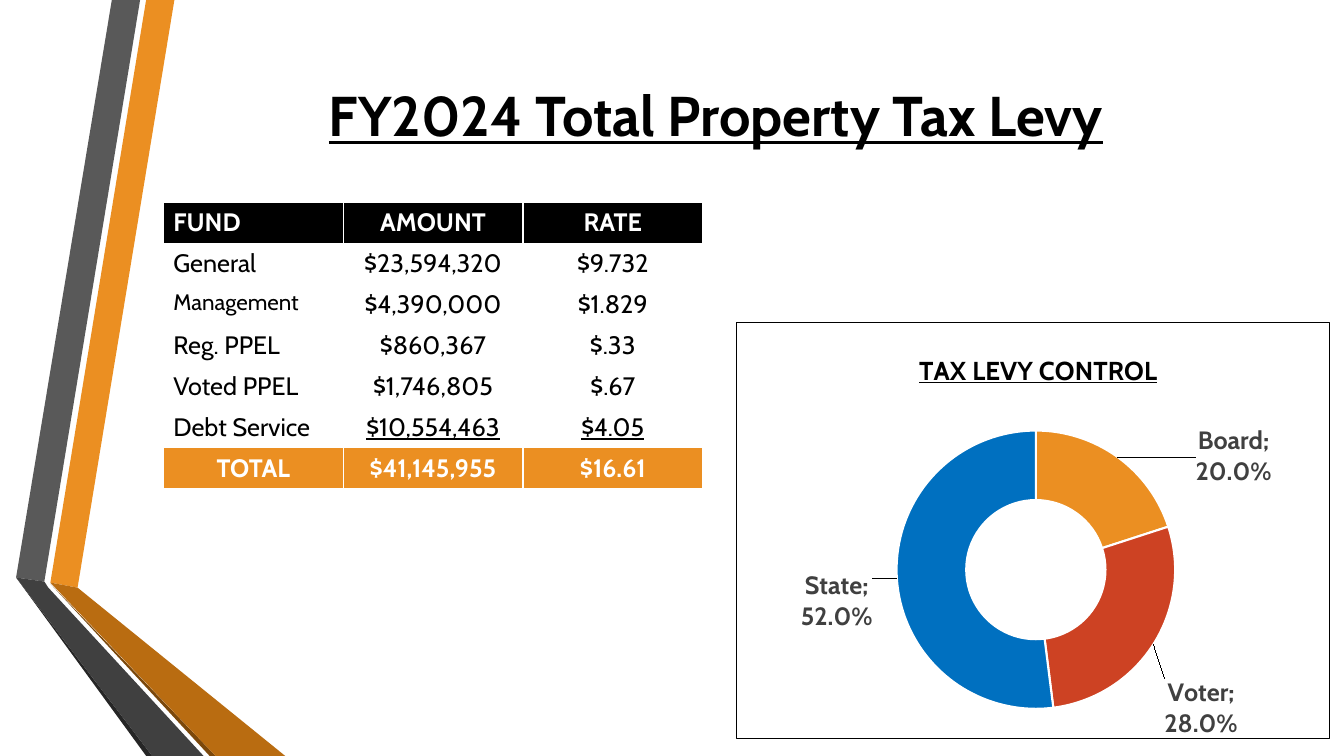
"""Build the FY2024 property tax levy slide with its fund table and control chart."""
from pptx import Presentation
from pptx.chart.data import CategoryChartData
from pptx.dml.color import RGBColor as RGB
from pptx.enum.chart import XL_CHART_TYPE as Kind
from pptx.enum.text import MSO_ANCHOR as Anchor, MSO_AUTO_SIZE as Fit, PP_ALIGN as Align
from pptx.oxml import parse_xml
from pptx.util import Inches, Pt

FONT = "Cabin"
BLACK = RGB(0, 0, 0)
WHITE = RGB(0xFF, 0xFF, 0xFF)
ORANGE = RGB(0xEB, 0x8F, 0x22)
RED = RGB(0xCD, 0x42, 0x23)
BLUE = RGB(0x00, 0x70, 0xC0)
GREY = RGB(0x59, 0x59, 0x59)
INK = RGB(0x26, 0x26, 0x26)
BROWN = RGB(0x7B, 0x48, 0x0B)
OCHRE = RGB(0xB9, 0x6C, 0x11)
DARK = RGB(0x40, 0x40, 0x40)

NS = ('xmlns:c="http://schemas.openxmlformats.org/drawingml/2006/chart" '
      'xmlns:a="http://schemas.openxmlformats.org/drawingml/2006/main"')


def style(font, size, color, bold=False, under=False):
    font.name, font.size, font.bold = FONT, Pt(size), bold
    font.underline = under
    font.color.rgb = color


def layout(x, y, extra="", mode=""):
    return parse_xml(f'<c:layout {NS}><c:manualLayout>{mode}<c:x val="{x}"/>'
                     f'<c:y val="{y}"/>{extra}</c:manualLayout></c:layout>')


deck = Presentation()
deck.slide_width, deck.slide_height = Inches(13.33), Inches(7.5)
slide = deck.slides.add_slide(deck.slide_layouts[5])
shapes = slide.shapes

bands = [
    (ORANGE, [(0.5, 5.78), (0.77, 5.83), (1.73, 0), (1.45, 0)]),
    (GREY, [(1.39, 0), (1.11, 0), (0.16, 5.73), (0.44, 5.77)]),
    (INK, [(0.16, 5.73), (1.45, 7.5), (1.51, 7.5)]),
    (BROWN, [(0.5, 5.79), (2.08, 7.5), (2.14, 7.5)]),
    (OCHRE, [(0.5, 5.78), (2.14, 7.5), (2.83, 7.5), (0.77, 5.83)]),
    (DARK, [(2.02, 7.5), (0.48, 5.83), (0.44, 5.77), (0.16, 5.73), (1.51, 7.5)]),
]
for color, spots in bands:
    spots = [(Inches(x), Inches(y)) for x, y in spots]
    pen = shapes.build_freeform(*spots[0])
    pen.add_line_segments(spots[1:], close=True)
    band = pen.convert_to_shape()
    band.shadow.inherit = False
    band.fill.solid()
    band.fill.fore_color.rgb = color
    band.line.fill.background()

title = shapes.title
title.left, title.top = Inches(1.62), Inches(0.75)
title.width, title.height = Inches(10.96), Inches(1.01)
frame = title.text_frame
frame.text = "FY2024 Total Property Tax Levy"
frame.auto_size, frame.vertical_anchor = Fit.NONE, Anchor.TOP
frame.paragraphs[0].alignment = Align.CENTER
style(frame.paragraphs[0].font, 40, BLACK, True, True)

rows = [
    ("FUND", "AMOUNT", "RATE"),
    ("General", "$23,594,320", "$9.732"),
    ("Management", "$4,390,000", "$1.829"),
    ("Reg. PPEL", "$860,367", "$.33"),
    ("Voted PPEL", "$1,746,805", "$.67"),
    ("Debt Service", "$10,554,463", "$4.05"),
    ("TOTAL", "$41,145,955", "$16.61"),
]
fills = {"FUND": BLACK, "TOTAL": ORANGE}
table = shapes.add_table(len(rows), 3, Inches(1.62), Inches(2.01),
                         Inches(5.35), Inches(2.84)).table
for r, row in enumerate(rows):
    fund = row[0]
    strong = fund in fills
    for c, text in enumerate(row):
        cell = table.cell(r, c)
        cell.fill.solid()
        cell.fill.fore_color.rgb = fills.get(fund, WHITE)
        cell.text = text
        para = cell.text_frame.paragraphs[0]
        para.alignment = Align.CENTER if c or fund == "TOTAL" else Align.LEFT
        style(para.font, 16 if text == "Management" else 18,
              WHITE if strong else BLACK, strong, c > 0 and fund == "Debt Service")

parts = [
    ("Board", 0.2, ORANGE, 0.23, -0.07),
    ("Voter", 0.28, RED, 0.13, 0.2),
    ("State", 0.52, BLUE, -0.16, 0.06),
]
data = CategoryChartData(number_format="0.0%")
data.categories = [part[0] for part in parts]
data.add_series("TAX LEVY CONTROL", [part[1] for part in parts])
chart = shapes.add_chart(Kind.DOUGHNUT, Inches(7.3), Inches(3.19),
                         Inches(5.89), Inches(4.14), data).chart
chart.has_legend = False
chart.font.name, chart.font.size = FONT, Pt(10)
chart.font.color.rgb = BLACK
chart.has_title = True
head = chart.chart_title
head.include_in_layout = False
head.text_frame.text = "TAX LEVY CONTROL"
style(head.text_frame.paragraphs[0].runs[0].font, 18.6, BLACK, True, True)

space = chart._chartSpace
edge = '<c:xMode val="edge"/><c:yMode val="edge"/>'
for old in space.xpath("c:chart/c:title/c:layout | c:chart/c:plotArea/c:layout"):
    old.getparent().remove(old)
space.xpath("c:chart/c:title/c:tx")[0].addnext(layout(0.3, 0.06, mode=edge))
space.xpath("c:chart/c:plotArea")[0].insert(0, layout(
    0.27, 0.26, '<c:w val="0.47"/><c:h val="0.67"/>',
    '<c:layoutTarget val="inner"/>' + edge))
space.xpath("c:chart")[0].addnext(parse_xml(
    f'<c:spPr {NS}><a:solidFill><a:srgbClr val="{WHITE}"/></a:solidFill>'
    f'<a:ln w="{Pt(0.75)}"><a:solidFill><a:srgbClr val="{BLACK}"/></a:solidFill>'
    '</a:ln></c:spPr>'))
space.xpath(".//c:holeSize")[0].set("val", "75")

series = chart.plots[0].series[0]
look = (f'<c:numFmt formatCode="0.0%" sourceLinked="0"/><c:spPr><a:noFill/></c:spPr>'
        f'<c:txPr><a:bodyPr/><a:p><a:pPr><a:defRPr sz="1800" b="1"><a:solidFill>'
        f'<a:srgbClr val="{DARK}"/></a:solidFill><a:latin typeface="{FONT}"/>'
        '</a:defRPr></a:pPr></a:p></c:txPr><c:showLegendKey val="0"/>'
        '<c:showVal val="1"/><c:showCatName val="1"/><c:showSerName val="0"/>'
        '<c:showPercent val="0"/><c:showBubbleSize val="0"/>'
        '<c:separator>;\n</c:separator>')
labels = parse_xml(
    f'<c:dLbls {NS}>{look}<c:showLeaderLines val="1"/><c:extLst>'
    '<c:ext uri="{CE6537A1-D6FC-4f65-9D91-7224C49458BB}" '
    'xmlns:c15="http://schemas.microsoft.com/office/drawing/2012/chart">'
    '<c15:showLeaderLines val="1"/></c:ext></c:extLst></c:dLbls>')
for i, (name, share, color, x, y) in enumerate(parts):
    slice = series.points[i].format
    slice.fill.solid()
    slice.fill.fore_color.rgb = color
    slice.line.color.rgb = WHITE
    slice.line.width = Pt(1.5)
    label = parse_xml(f'<c:dLbl {NS}><c:idx val="{i}"/>{look}</c:dLbl>')
    label.insert(1, layout(x, y))
    labels.insert(i, label)
for old in space.xpath(".//c:dLbls"):
    old.getparent().remove(old)
series._element.xpath("c:cat")[0].addprevious(labels)

deck.save("out.pptx")
